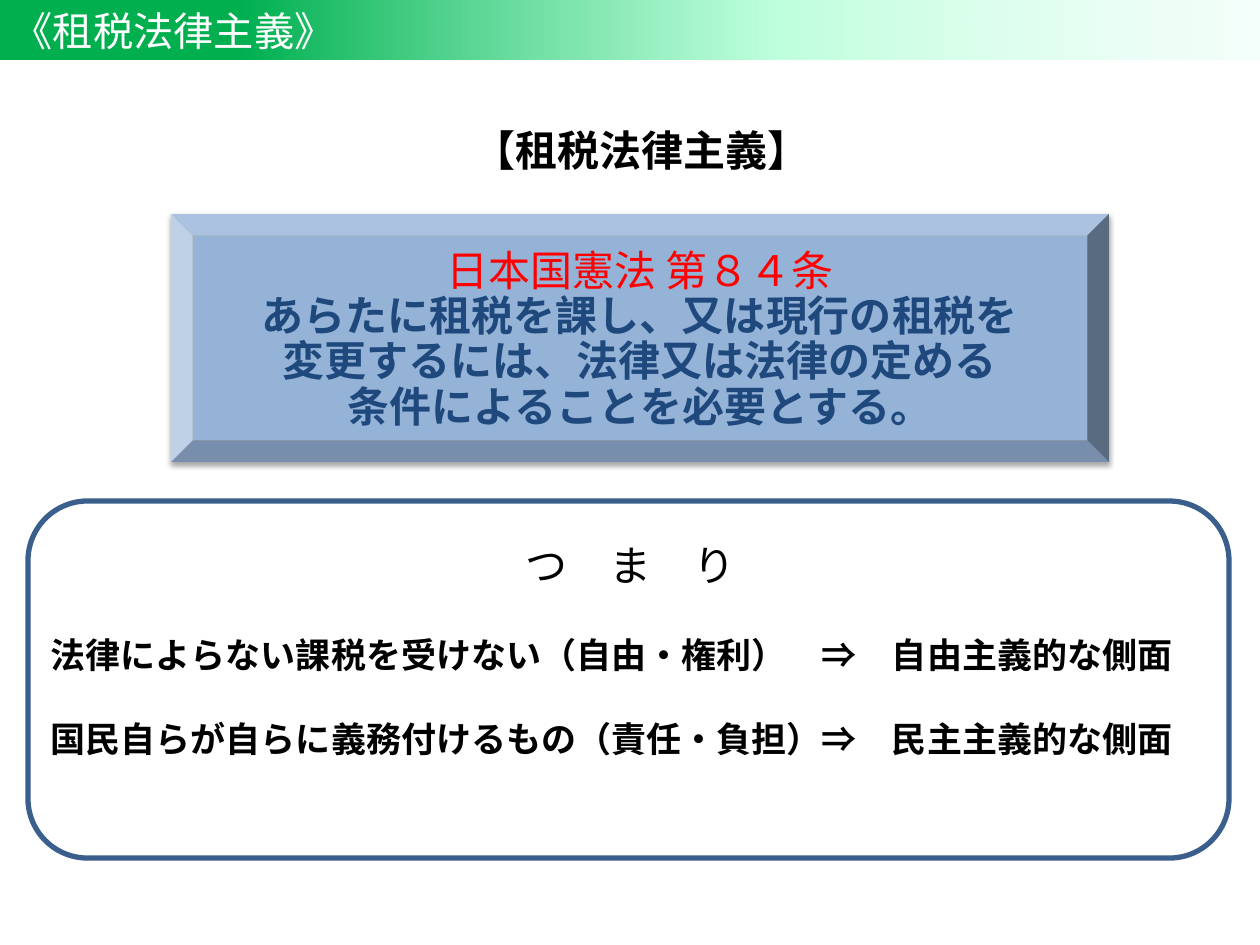
import dataclasses

import lxml.etree
import pptx
import pptx.dml.color
import pptx.enum.dml
import pptx.enum.shapes
import pptx.enum.text
import pptx.oxml
import pptx.oxml.ns
import pptx.util

SHAPE = pptx.enum.shapes.MSO_SHAPE
ALIGN = pptx.enum.text.PP_ALIGN
ANCHOR = pptx.enum.text.MSO_ANCHOR
QN = pptx.oxml.ns.qn


@dataclasses.dataclass(frozen=True)
class Theme:
    face: str = "Noto Sans CJK JP"
    black: str = "000000"
    white: str = "FFFFFF"
    red: str = "FF0000"
    navy: str = "1F497D"
    panel: str = "95B3D7"
    edge: str = "3A5F8C"
    fade: tuple = ((19, "00B050", 100), (61, "ABFFD3", 78), (100, "DBFFF0", 28))
    bar: int = 23
    head: int = 24
    body: int = 20


THEME = Theme()


def px(num):
    return pptx.util.Inches(num / 126)


def rgb(code):
    return pptx.dml.color.RGBColor.from_string(code)


def place(shape, box):
    shape.left, shape.top, shape.width, shape.height = map(px, box)


def within(box, left, top, width, height):
    return box[0] + left, box[1] + top, width, height


def write(para, text, size, color, bold=False, align=ALIGN.LEFT, lead=1.0):
    para.text = text
    para.alignment = align
    para.line_spacing = lead
    para.space_before = para.space_after = pptx.util.Pt(0)
    font = para.font
    font.name = THEME.face
    font.size = pptx.util.Pt(size)
    font.bold = bold
    font.color.rgb = rgb(color)
    base = para._p.pPr.find(QN("a:defRPr"))
    latin = base.find(QN("a:latin"))
    asian = lxml.etree.Element(QN("a:ea"), typeface=THEME.face)
    latin.addnext(asian)


def label(slide, box, text, bold=False, inset=True):
    shape = slide.shapes.add_textbox(*map(px, box))
    frame = shape.text_frame
    frame.word_wrap = False
    frame.vertical_anchor = ANCHOR.MIDDLE
    if not inset:
        frame.margin_left = frame.margin_right = 0
        frame.margin_top = frame.margin_bottom = 0
    write(frame.paragraphs[0], text, THEME.head, THEME.black, bold, ALIGN.CENTER)


def banner(slide, box):
    bar = slide.shapes.title
    place(bar, box)
    bar.fill.gradient()
    bar.fill.gradient_angle = 0
    stops = bar._element.spPr.find(QN("a:gradFill")).find(QN("a:gsLst"))
    stops.clear()
    for spot, color, alpha in THEME.fade:
        stop = lxml.etree.SubElement(stops, QN("a:gs"), pos=str(spot * 1000))
        tint = lxml.etree.SubElement(stop, QN("a:srgbClr"), val=color)
        lxml.etree.SubElement(tint, QN("a:alpha"), val=str(alpha * 1000))
    frame = bar.text_frame
    frame.auto_size = pptx.enum.text.MSO_AUTO_SIZE.NONE
    frame.vertical_anchor = ANCHOR.MIDDLE
    write(frame.paragraphs[0], "《租税法律主義》", THEME.bar, THEME.white)


def shade(shape):
    shape.shadow.inherit = False
    effect = shape._element.spPr.find(QN("a:effectLst"))
    drop = lxml.etree.SubElement(
        effect, QN("a:outerShdw"), blurRad=str(pptx.util.Pt(3.1)),
        dist=str(pptx.util.Pt(1.8)), dir="5400000", rotWithShape="0")
    color = lxml.etree.SubElement(drop, QN("a:srgbClr"), val=THEME.black)
    lxml.etree.SubElement(color, QN("a:alpha"), val="35000")


def article(slide, box):
    panel = slide.shapes.add_shape(SHAPE.BEVEL, *map(px, box))
    panel.adjustments[0] = 0.087
    panel.fill.solid()
    panel.fill.fore_color.rgb = rgb(THEME.panel)
    panel.line.fill.background()
    shade(panel)
    frame = panel.text_frame
    frame.vertical_anchor = ANCHOR.MIDDLE
    write(frame.paragraphs[0], "日本国憲法 第８４条", THEME.head, THEME.red,
          align=ALIGN.CENTER)
    for text in (" あらたに租税を課し、又は現行の租税を ",
                 " 変更するには、法律又は法律の定める ",
                 " 条件によることを必要とする。 "):
        write(frame.add_paragraph(), text, THEME.head, THEME.navy, True,
              ALIGN.CENTER, 0.9)


def meaning(slide, box):
    body = slide.placeholders[1]
    place(body, within(box, 10, 126, 1178, 140))
    frame = body.text_frame
    frame.auto_size = pptx.enum.text.MSO_AUTO_SIZE.NONE
    frame.vertical_anchor = ANCHOR.TOP
    lines = ("法律によらない課税を受けない（自由・権利）　⇒　自由主義的な側面",
             "国民自らが自らに義務付けるもの（責任・負担）⇒　民主主義的な側面")
    frame.text = "\n".join(lines)
    for para, text in zip(frame.paragraphs, lines):
        write(para, text, THEME.body, THEME.black, True)
        props = para._p.pPr
        props.set("marL", "0")
        props.set("indent", "0")
        bullet = lxml.etree.Element(QN("a:buNone"))
        props.find(QN("a:defRPr")).addprevious(bullet)
    frame.paragraphs[1].space_before = pptx.util.Pt(24)

    label(slide, within(box, 484, 32, 237, 63), "つ　ま　り")

    outline = slide.shapes.add_shape(SHAPE.ROUNDED_RECTANGLE, *map(px, box))
    outline.shadow.inherit = False
    outline.fill.background()
    outline.line.color.rgb = rgb(THEME.edge)
    outline.line.width = pptx.util.Pt(3)


def main():
    deck = pptx.Presentation()
    deck.slide_width, deck.slide_height = px(1260), px(945)
    slide = deck.slides.add_slide(deck.slide_layouts[1])
    banner(slide, (0, 0, 1260, 60))
    label(slide, (471, 125, 341, 50), "【租税法律主義】", True, False)
    article(slide, (171, 214, 938, 248))
    meaning(slide, (28, 501, 1201, 357))
    deck.save("out.pptx")


if __name__ == "__main__":
    main()
